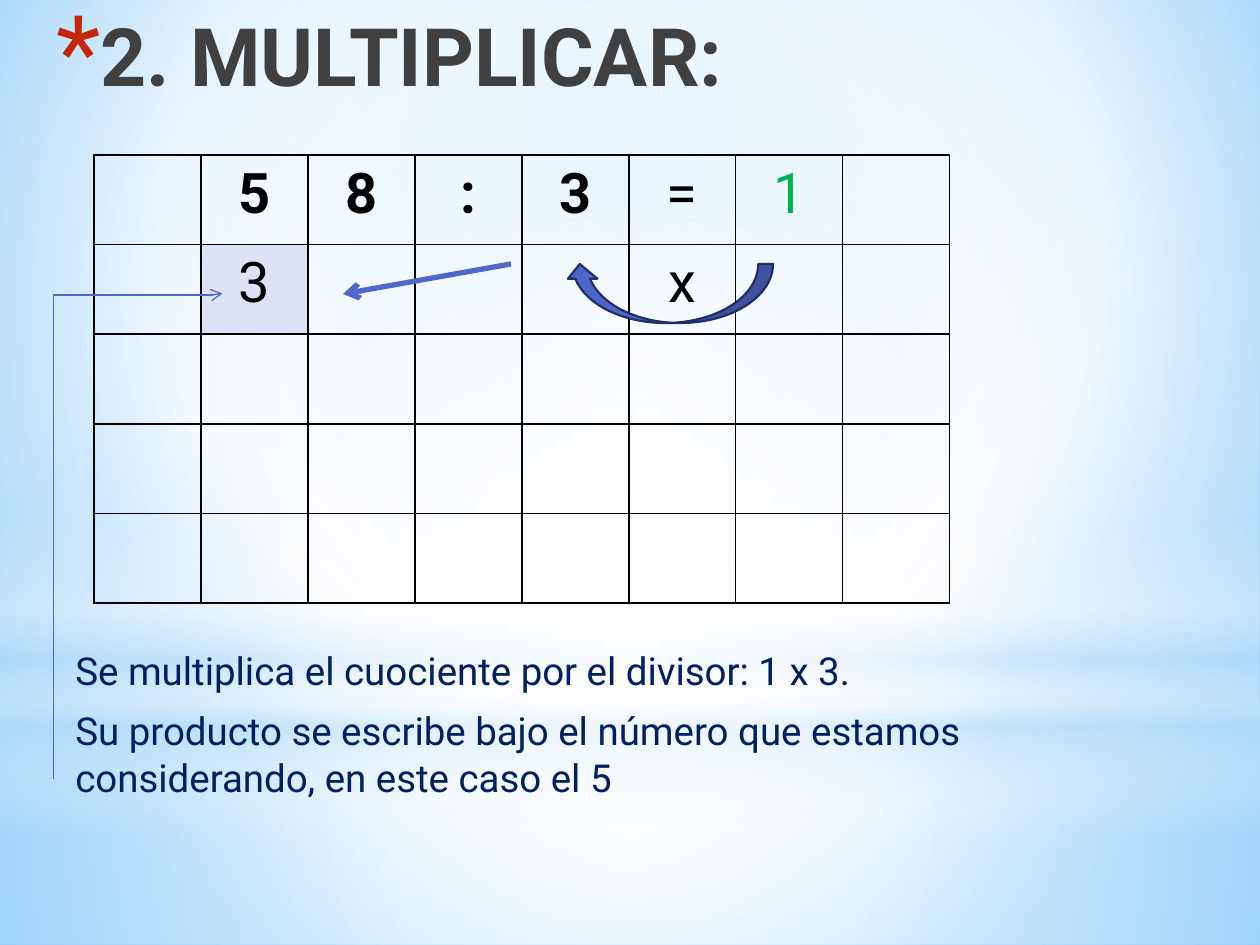
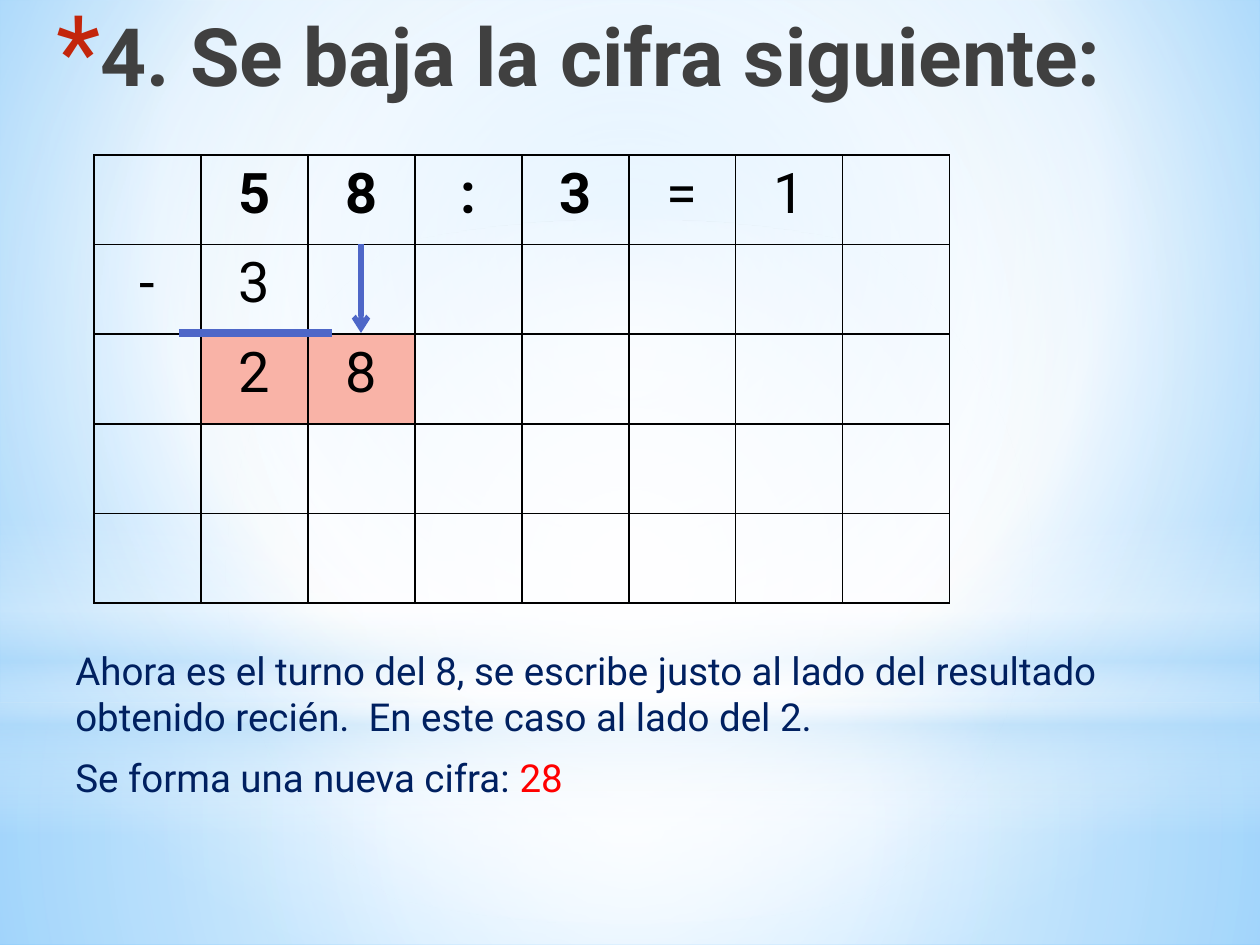
from lxml.etree import SubElement
from pptx import Presentation
from pptx.dml.color import RGBColor
from pptx.enum.shapes import MSO_CONNECTOR, MSO_SHAPE
from pptx.enum.text import MSO_ANCHOR, PP_ALIGN
from pptx.oxml import parse_xml
from pptx.oxml.ns import nsdecls, qn
from pptx.util import Emu, Pt

SCALE = 914400 / 126
FONT = "Roboto"
INK = {
    "title": "404040", "star": "C3260C", "body": "002060", "red": "FF0000",
    "black": "000000", "green": "00B050", "blue": "4E67C8", "navy": "1F2E69",
    "lilac": "DCE1F4", "salmon": "F9B3A7",
    "white": "FFFFFF", "pale": "B4DCFA", "sky": "9ED5FF", "deep": "5BB9FF",
}
CENTER = (50, 50, 50, 50)
COLS, ROWS = 8, 5
GRID = (94, 155, 856, 448)

# box, preset, stops (place, colour, alpha), focus (None runs top to bottom)
GLOW = [
    ((0, 703, 1260, 242), MSO_SHAPE.RECTANGLE,
     [(0, "white", 91), (37, "white", 76), (100, "pale", 79)], CENTER),
    ((0, 0, 1260, 703), MSO_SHAPE.RECTANGLE,
     [(0, "white", 89), (48, "white", 62), (100, "pale", 79)], CENTER),
    ((0, 519, 1260, 315), MSO_SHAPE.RECTANGLE,
     [(0, "white", 0), (29, "white", 30), (45, "pale", 40),
      (55, "white", 26), (65, "pale", 60), (100, "white", 0)], None),
    ((0, 220, 1260, 703), MSO_SHAPE.OVAL,
     [(0, "white", 100), (56, "white", 0)], CENTER),
]


def px(*sizes):
    return [Emu(round(size * SCALE)) for size in sizes]


def rgb(name):
    return RGBColor.from_string(INK[name])


def shade(holder, stops, focus):
    """Swap the empty fill of holder for a gradient."""
    marks = "".join(
        f'<a:gs pos="{pos * 1000}"><a:srgbClr val="{INK[name]}">'
        f'<a:alpha val="{alpha * 1000}"/></a:srgbClr></a:gs>'
        for pos, name, alpha in stops)
    way = '<a:lin ang="5400000" scaled="0"/>'
    if focus:
        sides = " ".join(f'{side}="{part * 1000}"' for side, part in zip("ltrb", focus))
        way = f'<a:path path="circle"><a:fillToRect {sides}/></a:path>'
    fill = parse_xml(f'<a:gradFill {nsdecls("a")} rotWithShape="1">'
                     f'<a:gsLst>{marks}</a:gsLst>{way}</a:gradFill>')
    holder.replace(holder.find(qn("a:noFill")), fill)


def write(para, text, size, color, bold=False):
    run = para.add_run()
    run.text = text
    font = run.font
    font.name, font.size, font.bold = FONT, Pt(size), bold
    font.color.rgb = rgb(color)


def add_back(slide):
    slide.background.fill.background()
    shade(slide.element.find(".//" + qn("p:bgPr")),
          [(0, "sky", 100), (60, "white", 100), (100, "deep", 100)], (20, 10, 20, 60))
    for box, kind, stops, focus in GLOW:
        glow = slide.shapes.add_shape(kind, *px(*box))
        glow.shadow.inherit = False
        glow.fill.background()
        glow.line.fill.background()
        shade(glow.element.spPr, stops, focus)


def add_text(slide, box):
    frame = slide.shapes.add_textbox(*px(*box)).text_frame
    frame.word_wrap = True
    frame.vertical_anchor = MSO_ANCHOR.TOP
    return frame


def add_title(slide, box, text):
    para = add_text(slide, box).paragraphs[0]
    write(para, text, 46, "title", True)
    props = para._p.get_or_add_pPr()
    indent = px(44)[0]
    props.set("marL", str(indent))
    props.set("indent", str(-indent))
    tint = SubElement(props, qn("a:buClr"))
    SubElement(tint, qn("a:srgbClr"), val=INK["star"])
    SubElement(props, qn("a:buSzPct"), val="128000")
    SubElement(props, qn("a:buFont"), typeface=FONT)
    SubElement(props, qn("a:buChar"), char="*")


def add_body(slide, box, paras):
    frame = add_text(slide, box)
    for index, runs in enumerate(paras):
        para = frame.add_paragraph() if index else frame.paragraphs[0]
        para.space_before, para.space_after = Pt(5), Pt(3)
        for text, color in runs:
            write(para, text, 22, color)


def edge(cell):
    props = cell._tc.get_or_add_tcPr()
    for spot, side in enumerate(("lnL", "lnR", "lnT", "lnB")):
        props.insert(spot, parse_xml(
            f'<a:{side} {nsdecls("a")} w="12700"><a:solidFill>'
            f'<a:srgbClr val="{INK["black"]}"/></a:solidFill></a:{side}>'))


def add_grid(slide, box, lines, inks, fills):
    """Put one character of each line in a cell; the sum itself is bold."""
    table = slide.shapes.add_table(ROWS, COLS, *px(*box)).table
    table.first_row = table.horz_banding = False
    for col in table.columns:
        col.width = px(box[2] / COLS)[0]
    for row in table.rows:
        row.height = px(box[3] / ROWS)[0]
    for r in range(ROWS):
        line = lines[r] if r < len(lines) else ""
        for c in range(COLS):
            cell = table.cell(r, c)
            if (r, c) in fills:
                cell.fill.solid()
                cell.fill.fore_color.rgb = rgb(fills[r, c])
            else:
                cell.fill.background()
            edge(cell)
            sign = line[c:c + 1].strip()
            if sign:
                para = cell.text_frame.paragraphs[0]
                para.alignment = PP_ALIGN.CENTER
                write(para, sign, 32, inks.get((r, c), "black"), r == 0 and c < 5)


def add_line(slide, ends, width, arrow=True, kind=MSO_CONNECTOR.STRAIGHT):
    line = slide.shapes.add_connector(kind, *px(*ends))
    line.line.color.rgb = rgb("blue")
    line.line.width = Pt(width)
    props = line.element.spPr
    if arrow:
        SubElement(props.find(qn("a:ln")), qn("a:tailEnd"), type="arrow")
    SubElement(props, qn("a:effectLst"))
    return line


def add_elbow(slide, ends):
    """Elbow turned a quarter, so that it climbs and then runs right."""
    props = add_line(slide, ends, 0.75, kind=MSO_CONNECTOR.ELBOW).element.spPr
    for key, value in (("rot", "5400000"), ("flipH", "1"), ("flipV", "1")):
        props.find(qn("a:xfrm")).set(key, value)
    guides = props.find(qn("a:prstGeom")).find(qn("a:avLst"))
    SubElement(guides, qn("a:gd"), name="adj1", fmla="val 99700")


def add_curve(slide, box):
    curve = slide.shapes.add_shape(MSO_SHAPE.CURVED_UP_ARROW, *px(*box))
    curve.shadow.inherit = False
    curve.fill.solid()
    curve.fill.fore_color.rgb = rgb("blue")
    curve.line.color.rgb = rgb("navy")
    curve.line.width = Pt(1.25)
    curve.element.spPr.find(qn("a:xfrm")).set("flipH", "1")


def add_step(deck, title, paras, lines, inks, fills):
    slide = deck.slides.add_slide(deck.slide_layouts[6])
    add_back(slide)
    add_title(slide, (44, 0, 1134, 157), title)
    add_body(slide, (63, 641, 1134, 203), paras)
    add_grid(slide, GRID, lines, inks, fills)
    return slide


def main():
    deck = Presentation()
    deck.slide_width, deck.slide_height = px(1260, 945)

    times = add_step(
        deck, "2. MULTIPLICAR:",
        [[("Se multiplica el cuociente por el divisor: 1 x 3.", "body")],
         [("Su producto se escribe bajo el número que estamos considerando, "
           "en este caso el 5", "body")]],
        [" 58:3=1", " 3   x"], {(0, 6): "green"}, {(1, 1): "lilac"})
    add_curve(times, (565, 264, 208, 59))
    add_elbow(times, (-105, 452, 381, 621))
    add_line(times, (511, 264, 343, 294), 3)

    lower = add_step(
        deck, "4. Se baja la cifra siguiente:",
        [[("Ahora es el turno del 8, se escribe justo al lado del resultado "
           "obtenido recién.  En este caso al lado del 2.", "body")],
         [("Se forma una nueva cifra:", "body"), (" 28", "red")]],
        [" 58:3=1", "-3", " 28"], {}, {(2, 1): "salmon", (2, 2): "salmon"})
    add_line(lower, (179, 333, 332, 333), 4.5, arrow=False)
    add_line(lower, (361, 244, 361, 333), 3)

    deck.save("out.pptx")


if __name__ == "__main__":
    main()
